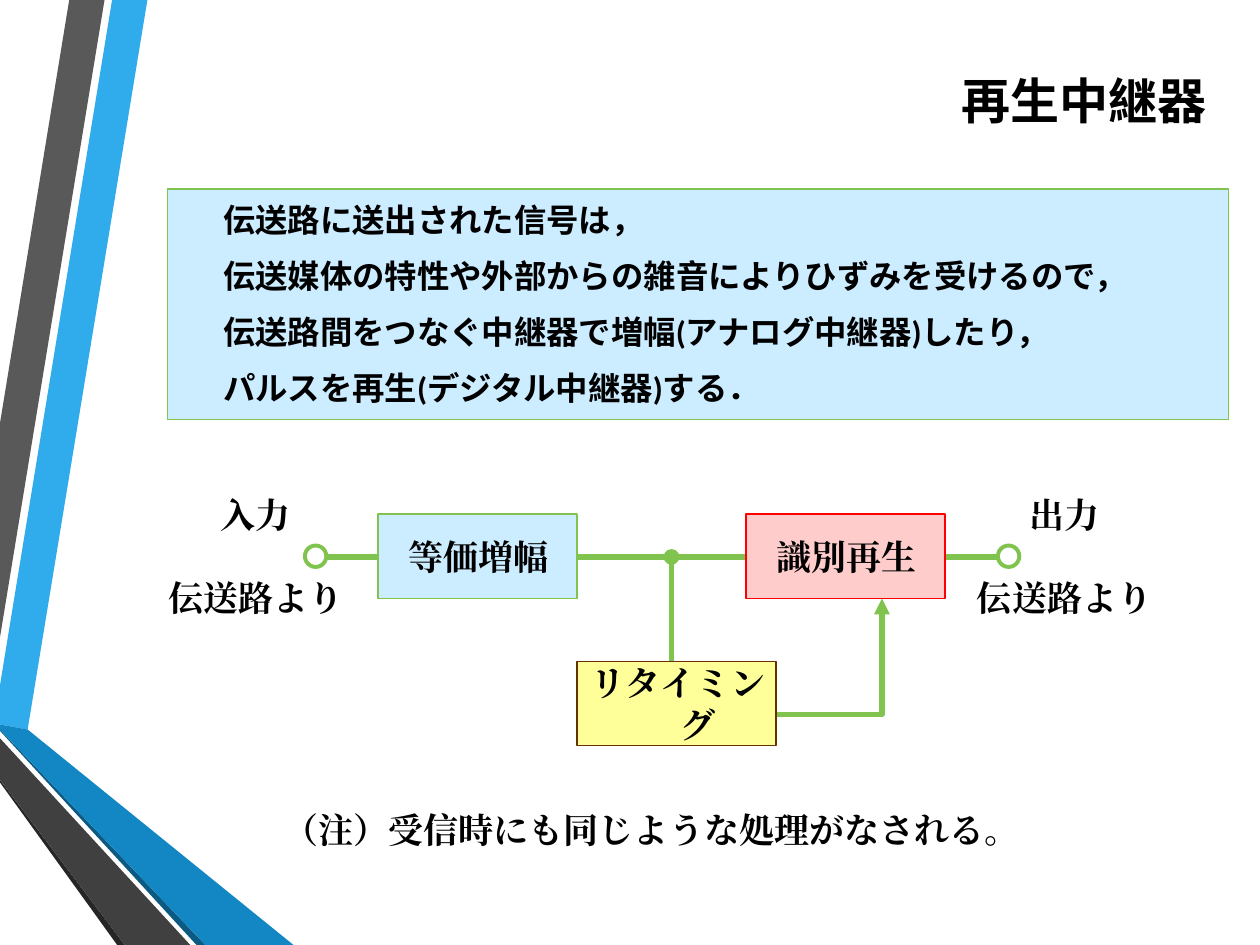
from lxml.etree import SubElement
from pptx import Presentation
from pptx.dml.color import RGBColor
from pptx.enum.shapes import MSO_CONNECTOR, MSO_SHAPE
from pptx.enum.text import MSO_ANCHOR, PP_ALIGN
from pptx.oxml.ns import qn
from pptx.util import Inches, Pt

COLORS = {
    "sky": "30ACEC", "blue": "1287C3", "navy": "0C5A82",
    "gray": "595959", "charcoal": "404040", "soot": "262626",
    "green": "80C34F", "pale_blue": "CCECFF", "pink": "FFCCCC",
    "red": "FF0000", "yellow": "FFFF99", "brown": "663300",
    "white": "FFFFFF", "black": "000000",
}

RIBBONS = [
    ("sky", [(0, 5.44), (0, 5.75), (0.22, 5.79), (1.17, 0), (0.89, 0)]),
    ("gray", [(0.83, 0), (0.55, 0), (0, 3.36), (0, 5.06)]),
    ("soot", [(0, 6.19), (0, 6.21), (0.93, 7.5), (0.99, 7.5)]),
    ("navy", [(0, 5.79), (0, 5.8), (1.56, 7.5), (1.63, 7.5)]),
    ("blue", [(0, 5.79), (1.63, 7.5), (2.33, 7.5), (0.22, 5.79), (0, 5.75)]),
    ("charcoal", [(0, 6.19), (0.99, 7.5), (1.51, 7.5), (0, 5.86)]),
]

EXPLANATION = [
    "伝送路に送出された信号は，",
    "伝送媒体の特性や外部からの雑音によりひずみを受けるので，",
    "伝送路間をつなぐ中継器で増幅(アナログ中継器)したり，",
    "パルスを再生(デジタル中継器)する．",
]

STAGES = [
    ("等価増幅", 3, 4.08, "pale_blue", "green"),
    ("識別再生", 5.92, 4.08, "pink", "red"),
    ("リタイミング", 4.58, 5.25, "yellow", "brown"),
]

TERMINALS = [("入力", 1.33, 2.42), ("出力", 7.75, 7.92)]
SIGNAL_Y = 4.42
LABEL_SIZE = (1.4, 0.33)


def rgb(color):
    return RGBColor.from_string(COLORS[color])


def set_line(line, color, width):
    line.color.rgb = rgb(color)
    line.width = Pt(width)


def add_polygon(slide, points, close=True):
    corners = [(Inches(x), Inches(y)) for x, y in points]
    builder = slide.shapes.build_freeform(*corners[0], scale=1.0)
    builder.add_line_segments(corners[1:], close=close)
    polygon = builder.convert_to_shape()
    polygon.shadow.inherit = False
    return polygon


def add_ribbon(slide, color, points):
    ribbon = add_polygon(slide, points)
    ribbon.fill.solid()
    ribbon.fill.fore_color.rgb = rgb(color)
    ribbon.line.fill.background()


def add_timing_path(slide):
    route = add_polygon(
        slide, [(5.33, SIGNAL_Y), (5.33, 5.67), (7, 5.67), (7, 4.75)], close=False)
    route.fill.background()
    set_line(route.line, "green", 3)
    outline = route.line._get_or_add_ln()
    SubElement(outline, qn("a:headEnd"), type="oval")
    SubElement(outline, qn("a:tailEnd"), type="triangle")


def add_signal_line(slide):
    signal = slide.shapes.add_connector(
        MSO_CONNECTOR.STRAIGHT, Inches(2.58), Inches(SIGNAL_Y),
        Inches(7.92), Inches(SIGNAL_Y))
    set_line(signal.line, "green", 3)
    SubElement(signal._element.spPr, qn("a:effectLst"))


def add_figure(slide, kind, area, fill, line, width=0.75):
    figure = slide.shapes.add_shape(kind, *map(Inches, area))
    figure.shadow.inherit = False
    figure.fill.solid()
    figure.fill.fore_color.rgb = rgb(fill)
    set_line(figure.line, line, width)


def add_text(slide, lines, area, size=20, font="Times New Roman",
             align=PP_ALIGN.CENTER, anchor=MSO_ANCHOR.MIDDLE,
             inset=(0, 0), hanging=0.32, before=4, after=0):
    frame = slide.shapes.add_textbox(*map(Inches, area)).text_frame
    frame.word_wrap = True
    frame.vertical_anchor = anchor
    frame.margin_left = frame.margin_right = Inches(inset[0])
    frame.margin_top = frame.margin_bottom = Inches(inset[1])
    frame.text = "\n".join(lines)
    for paragraph in frame.paragraphs:
        paragraph.alignment = align
        paragraph.space_before = Pt(before)
        paragraph.space_after = Pt(after)
        properties = paragraph._p.get_or_add_pPr()
        properties.set("marL", str(Inches(hanging)))
        properties.set("indent", str(-Inches(hanging)))
        run = paragraph.runs[0]
        run.font.size = Pt(size)
        run.font.bold = True
        run.font.name = font
        run.font.color.rgb = rgb("black")
        SubElement(run.font._element, qn("a:ea"), typeface=font)


def add_stage(slide, label, left, top, fill, line):
    add_figure(slide, MSO_SHAPE.RECTANGLE, (left, top, 1.58, 0.67), fill, line)
    add_text(slide, [label], (left + 0.1, top + 0.17, *LABEL_SIZE))


def add_terminal(slide, label, label_left, circle_left):
    add_figure(slide, MSO_SHAPE.OVAL, (circle_left, 4.33, 0.17, 0.17),
               "white", "green", 2.25)
    for text, top in ((label, 3.92), ("伝送路より", 4.58)):
        add_text(slide, [text], (label_left, top, *LABEL_SIZE))


def main():
    presentation = Presentation()
    presentation.slide_width = Inches(10)
    presentation.slide_height = Inches(7.5)
    slide = presentation.slides.add_slide(presentation.slide_layouts[6])

    for color, points in RIBBONS:
        add_ribbon(slide, color, points)
    add_timing_path(slide)
    add_figure(slide, MSO_SHAPE.RECTANGLE, (1.33, 1.5, 8.42, 1.83),
               "pale_blue", "green")
    add_text(slide, ["再生中継器"], (1.17, 0.17, 8.5, 1.25), size=28,
             font="Calibri", align=PP_ALIGN.RIGHT, inset=(0.1, 0.05),
             hanging=0, before=0)
    add_text(slide, EXPLANATION, (1.77, 1.62, 7.58, 1.58), size=18.5,
             font="Calibri", align=PP_ALIGN.LEFT, before=3.7, after=6)
    add_signal_line(slide)
    for terminal in TERMINALS:
        add_terminal(slide, *terminal)
    for stage in STAGES:
        add_stage(slide, *stage)
    add_text(slide, ["（注）受信時にも同じような処理がなされる。"],
             (2.25, 6.42, 5.67, 0.5), align=PP_ALIGN.LEFT, anchor=MSO_ANCHOR.TOP)

    presentation.save("out.pptx")


if __name__ == "__main__":
    main()
